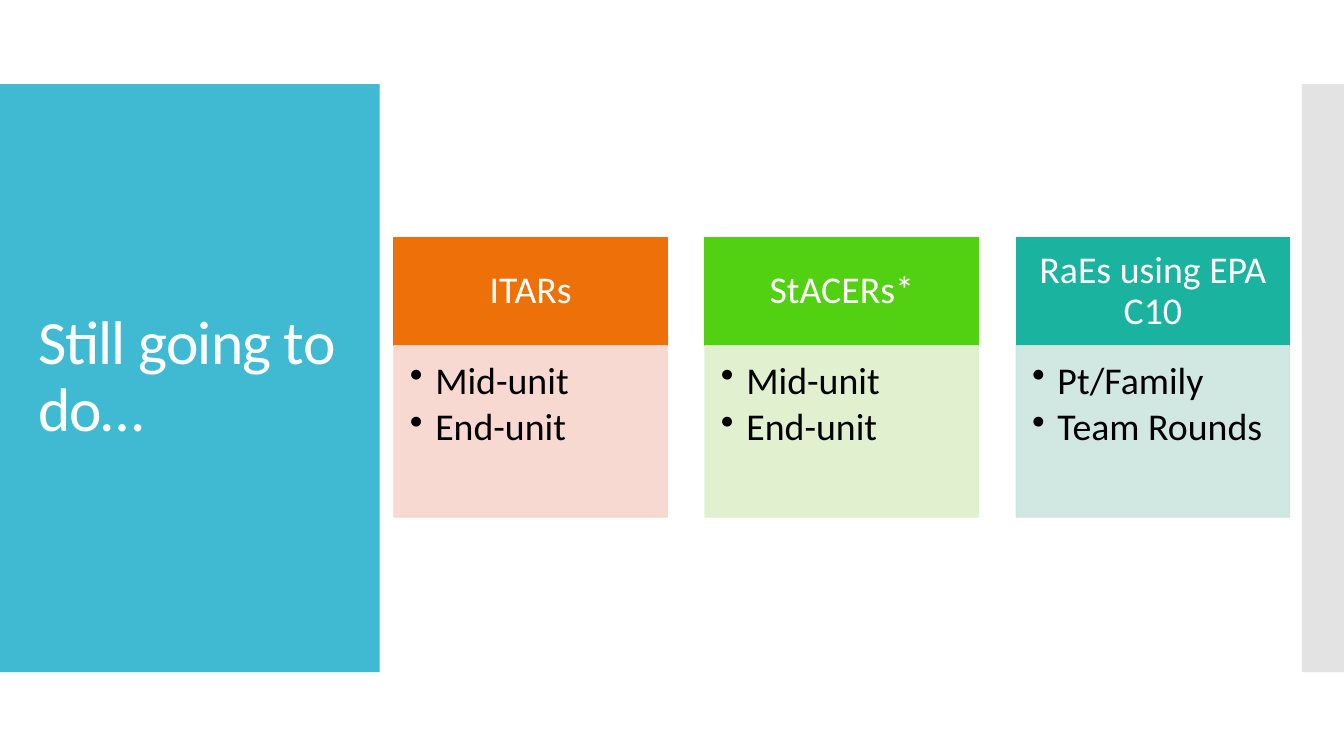
from dataclasses import dataclass

from lxml.etree import SubElement
from pptx import Presentation
from pptx.dml.color import RGBColor
from pptx.enum.shapes import MSO_SHAPE
from pptx.enum.text import MSO_ANCHOR, PP_ALIGN
from pptx.oxml.ns import qn
from pptx.util import Cm, Pt


@dataclass(frozen=True)
class Theme:
    font: str = "Calibri"
    title_size: int = 44
    card_size: int = 27
    light: str = "FFFFFF"
    dark: str = "000000"
    panel: str = "40BAD2"
    strip: str = "C8C8C8"
    card_colors: tuple = (("EE7008", "F8D5CC"), ("52D012", "DEF0CB"), ("1AB39F", "CDE5DF"))


class SlideBuilder:
    """Draws panels, card headings and bullet lists on one slide in one theme."""

    def __init__(self, page, theme):
        self.page = page
        self.theme = theme

    def block(self, place, color, opacity=100, outlined=False):
        box = self.page.shapes.add_shape(MSO_SHAPE.RECTANGLE, *map(Cm, place))
        box.shadow.inherit = False
        paints = [box.fill]
        if outlined:
            box.line.width = Pt(0.85)
            paints.append(box.line.fill)
        else:
            box.line.fill.background()
        for paint in paints:
            paint.solid()
            paint.fore_color.rgb = RGBColor.from_string(color)
        if opacity < 100:
            for node in box._element.spPr.iter(qn("a:srgbClr")):
                SubElement(node, qn("a:alpha"), val=str(opacity * 1000))
        return box

    def add_text(self, box, lines, size, color, insets, anchor, align, after=0, tracking=0, bullet=None):
        frame = box.text_frame
        sides = ("margin_left", "margin_top", "margin_right", "margin_bottom")
        frame_format = dict(zip(sides, map(Cm, insets)), word_wrap=True, vertical_anchor=anchor)
        for name, value in frame_format.items():
            setattr(frame, name, value)
        para_format = {"alignment": align, "line_spacing": 0.9, "space_after": Pt(after)}
        font_format = {"name": self.theme.font, "size": Pt(size)}
        for index, line in enumerate(lines):
            para = frame.add_paragraph() if index else frame.paragraphs[0]
            for name, value in para_format.items():
                setattr(para, name, value)
            if bullet:
                properties = para._p.get_or_add_pPr()
                properties.set("marL", str(Cm(0.64)))
                properties.set("indent", str(-Cm(0.64)))
                SubElement(properties, qn("a:buChar"), char=bullet)
            span = para.add_run()
            span.text = line
            for name, value in font_format.items():
                setattr(span.font, name, value)
            span.font.color.rgb = RGBColor.from_string(color)
            if tracking:
                span._r.get_or_add_rPr().set("spc", str(tracking))

    def title_panel(self, text):
        box = self.block((0, 2.12, 9.57, 14.82), self.theme.panel)
        self.add_text(box, [text], self.theme.title_size, self.theme.light, (0.96, 0.13, 0.93, 0.13),
                      MSO_ANCHOR.MIDDLE, PP_ALIGN.LEFT, tracking=-60)

    def side_strip(self):
        self.block((32.81, 2.12, 1.06, 14.82), self.theme.strip, opacity=50)

    def card(self, left, heading, items, color, tint):
        top, width, head_height, body_height = 5.99, 6.89, 2.72, 4.32
        head = self.block((left, top, width, head_height), color, outlined=True)
        self.add_text(head, [heading], self.theme.card_size, self.theme.light, (0.53, 0.3, 0.53, 0.3),
                      MSO_ANCHOR.MIDDLE, PP_ALIGN.CENTER)
        body = self.block((left, top + head_height, width, body_height), tint, 90, outlined=True)
        self.add_text(body, items, self.theme.card_size, self.theme.dark, (0.4, 0.4, 0.53, 0.6),
                      MSO_ANCHOR.TOP, PP_ALIGN.LEFT, after=4, bullet="•")


CARDS = [
    ("ITARs", ["Mid-unit", "End-unit"]),
    ("StACERs*", ["Mid-unit", "End-unit"]),
    ("RaEs using EPA C10", ["Pt/Family", "Team Rounds"]),
]


def main():
    deck = Presentation()
    deck.slide_width, deck.slide_height = Cm(33.87), Cm(19.05)
    theme = Theme()
    builder = SlideBuilder(deck.slides.add_slide(deck.slide_layouts[6]), theme)
    builder.title_panel("Still going to do…")
    builder.side_strip()
    for index, (card, colors) in enumerate(zip(CARDS, theme.card_colors)):
        builder.card(9.93 + 7.84 * index, *card, *colors)
    deck.save("out.pptx")


if __name__ == "__main__":
    main()
